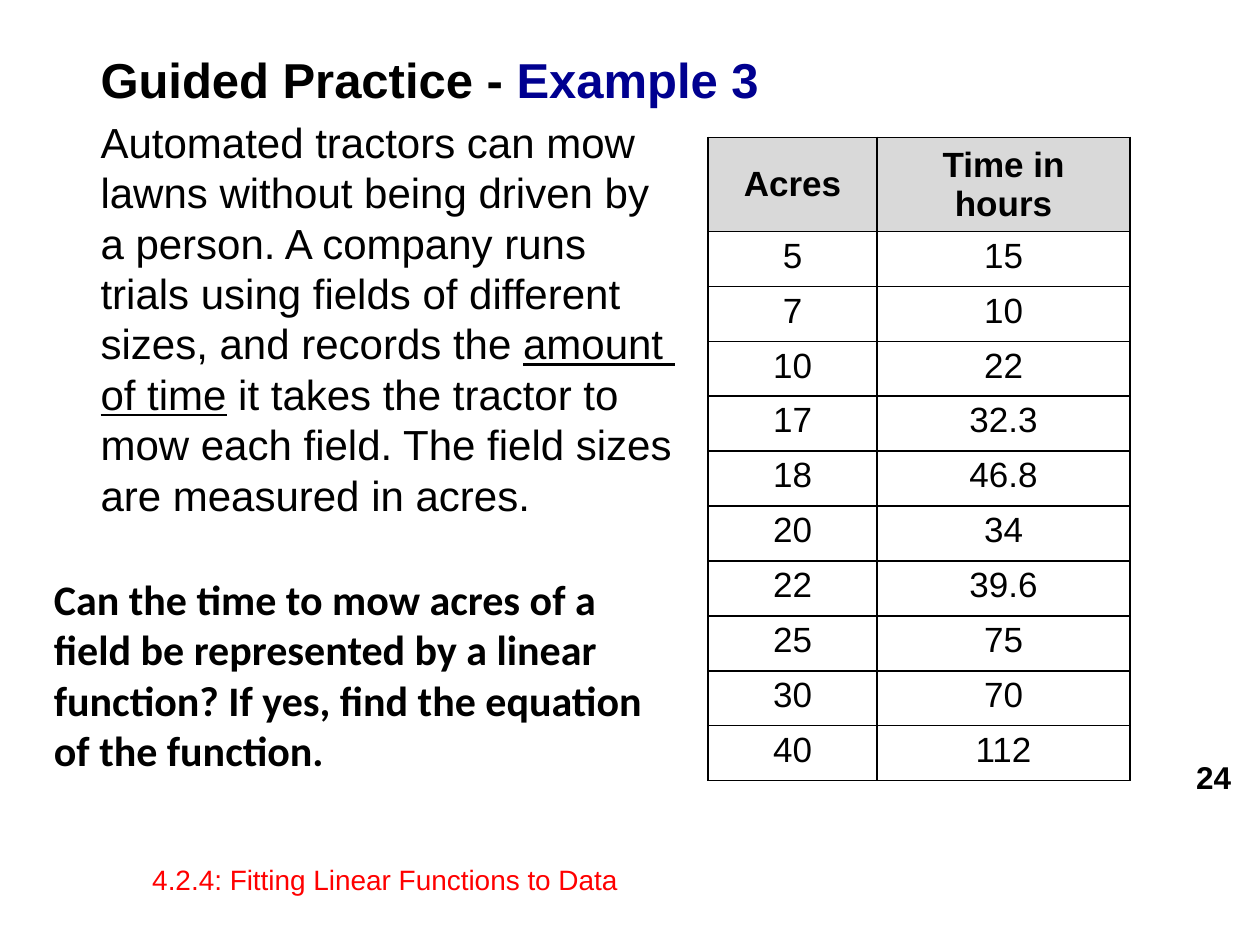
from pptx import Presentation
from pptx.dml.color import RGBColor
from pptx.enum.text import MSO_ANCHOR as Anchor, PP_ALIGN as Align
from pptx.oxml import parse_xml
from pptx.oxml.ns import nsdecls
from pptx.util import Inches, Pt

BLACK = RGBColor(0, 0, 0)
WHITE = RGBColor(255, 255, 255)
NAVY = RGBColor(0, 0, 0x90)
RED = RGBColor(255, 0, 0)
GRAY = RGBColor(0xD9, 0xD9, 0xD9)

HEADER = ("Acres", "Time in hours")
TRIALS = [(5, 15), (7, 10), (10, 22), (17, 32.3), (18, 46.8),
          (20, 34), (22, 39.6), (25, 75), (30, 70), (40, 112)]


class SlideBuilder:
    font = "Arial"

    def __init__(self, prs):
        self.slide = prs.slides.add_slide(prs.slide_layouts[6])

    def style(self, p, size, color=BLACK, bold=False, align=Align.LEFT, font=None):
        p.alignment = align
        f = p.font
        f.name, f.size, f.bold = font or self.font, Pt(size), bold
        f.color.rgb = color

    def text_box(self, left, top, width, height, anchor=Anchor.TOP):
        """Add an empty wrapping text box and return its text frame."""
        box = self.slide.shapes.add_textbox(
            Inches(left), Inches(top), Inches(width), Inches(height))
        tf = box.text_frame
        tf.word_wrap = True
        tf.vertical_anchor = anchor
        return tf

    def label(self, left, top, width, height, text, size,
              anchor=Anchor.MIDDLE, **style):
        p = self.text_box(left, top, width, height, anchor).paragraphs[0]
        p.text = text
        self.style(p, size, **style)
        return p

    def border(self, cell):
        """Draw a thin black line on all four sides of a cell."""
        tc_pr = cell._tc.get_or_add_tcPr()
        for i, side in enumerate(("lnL", "lnR", "lnT", "lnB")):
            tc_pr.insert(i, parse_xml(
                f'<a:{side} {nsdecls("a")} w="12700"><a:solidFill>'
                f'<a:srgbClr val="{BLACK}"/></a:solidFill></a:{side}>'))

    def table(self, left, top, widths, heights, rows):
        frame = self.slide.shapes.add_table(
            len(rows), len(widths), Inches(left), Inches(top),
            Inches(sum(widths)), Inches(sum(heights)))
        table = frame.table
        for column, width in zip(table.columns, widths):
            column.width = Inches(width)
        for i, (values, height) in enumerate(zip(rows, heights)):
            table.rows[i].height = Inches(height)
            is_header = i == 0
            for j, value in enumerate(values):
                cell = table.cell(i, j)
                cell.text = str(value)
                cell.margin_top = cell.margin_bottom = Inches(0.04)
                cell.vertical_anchor = Anchor.MIDDLE if is_header else Anchor.TOP
                cell.fill.solid()
                cell.fill.fore_color.rgb = GRAY if is_header else WHITE
                self.style(cell.text_frame.paragraphs[0], 20,
                           bold=is_header, align=Align.CENTER)
                self.border(cell)


def add_problem(s):
    tf = s.text_box(0.7, 0.34, 8.87, 5.47)
    title = tf.paragraphs[0]
    title.space_before = Pt(5.6)
    s.style(title, 28, bold=True)
    title.add_run().text = "Guided Practice - "
    r = title.add_run()
    r.text = "Example 3"
    r.font.color.rgb = NAVY

    p = tf.add_paragraph()
    p.text = ("Automated tractors can mow \vlawns without being driven by \v"
              "a person. A company runs \vtrials using fields of different \v"
              "sizes, and records the ")
    for text in ("amount ", "of time"):
        r = p.add_run()
        r.text = text
        r.font.underline = True
        if text == "amount ":
            p.add_line_break()
    for i, text in enumerate((" it takes the tractor to ",
                              "mow each field. The field sizes ",
                              "are measured in acres.")):
        if i:
            p.add_line_break()
        p.add_run().text = text
    p.space_before = Pt(4.8)
    p.line_spacing = Pt(28.8)
    s.style(p, 24)


def main():
    prs = Presentation()
    prs.slide_width, prs.slide_height = Inches(10), Inches(7.5)
    s = SlideBuilder(prs)
    add_problem(s)
    s.label(9.07, 6.01, 0.8, 0.31, "24", 18, bold=True, align=Align.RIGHT)
    s.label(1.11, 6.83, 6.09, 0.29,
            "4.2.4: Fitting Linear Functions to Data", 16, color=RED)
    row_height = (5.07 - 0.71) / len(TRIALS)
    s.table(5.62, 1.09, (1.34, 2.01), [0.71] + [row_height] * len(TRIALS),
            [HEADER] + TRIALS)
    question = s.label(
        0.33, 4.5, 5.17, 1.72,
        "Can the time to mow acres of a field be represented by a linear "
        "function? If yes, find the equation of the function.",
        24, anchor=Anchor.TOP, bold=True, font="Calibri")
    question.line_spacing = Pt(28.8)
    prs.save("out.pptx")


if __name__ == "__main__":
    main()
